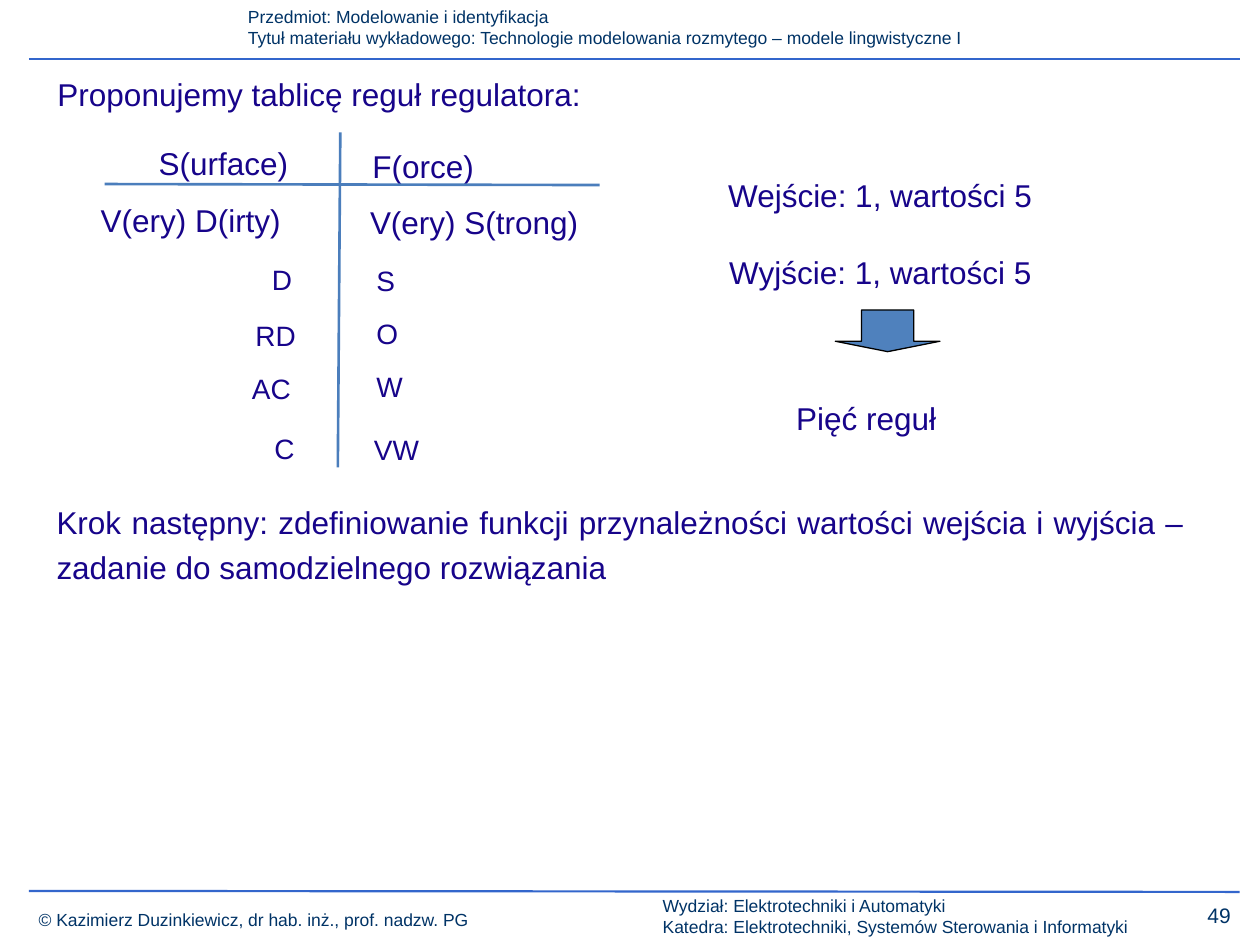
from dataclasses import dataclass

import pptx
import pptx.dml.color
import pptx.enum.shapes
import pptx.enum.text
import pptx.oxml
import pptx.oxml.ns
import pptx.util
from pptx.util import Cm

ALIGN = pptx.enum.text.PP_ALIGN


@dataclass(frozen=True)
class Theme:
    font: str = "Arial"
    ink: str = "17048A"
    frame_ink: str = "003366"
    frame_rule: str = "3366CC"
    table_rule: str = "4B7EBC"
    arrow_fill: str = "4F81BD"
    arrow_line: str = "000000"
    body: float = 18
    entry: float = 16
    number: float = 12
    small: float = 10


@dataclass(frozen=True)
class Label:
    """A piece of text with its place in centimetres."""
    text: str
    left: float
    top: float
    width: float
    height: float = 1.17


@dataclass(frozen=True)
class Rule:
    """A straight line between two points in centimetres."""
    x1: float
    y1: float
    x2: float
    y2: float


THEME = Theme()

# Page frame
FRAME_LABELS = [
    Label("Przedmiot: Modelowanie i identyfikacja\n"
          "Tytuł materiału wykładowego: Technologie modelowania rozmytego – modele lingwistyczne I",
          4.75, 0, 20.65, 1.12),
    Label("© Kazimierz Duzinkiewicz, dr hab. inż., prof. nadzw. PG", 0.53, 18.19, 10.21, 0.69),
    Label("Wydział: Elektrotechniki i Automatyki\n"
          "Katedra: Elektrotechniki, Systemów Sterowania i Informatyki",
          13.11, 17.91, 11.3, 1.12),
]
PAGE_NUMBER = Label("49", 23.75, 18.06, 1.65, 0.76)
FRAME_RULES = [Rule(0.58, 1.19, 24.99, 1.19), Rule(0.58, 17.96, 24.99, 17.98)]

# Statements, table headings and the first rule
BODY_LABELS = [
    Label("Proponujemy tablicę reguł regulatora:", 0.91, 1.24, 23.22),
    Label("S(urface)", 2.95, 2.62, 3.48),
    Label("F(orce)", 7.26, 2.69, 3.48),
    Label("V(ery) D(irty)", 1.78, 3.78, 5.11),
    Label("V(ery) S(trong)", 7.21, 3.81, 5.11),
    Label("Wejście: 1, wartości 5", 14.43, 3.28, 10.36),
    Label("Wyjście: 1, wartości 5", 14.45, 4.83, 10.36),
    Label("Pięć reguł", 15.8, 7.77, 4.29),
    Label("Krok następny: zdefiniowanie funkcji przynależności wartości wejścia i wyjścia – "
          "zadanie do samodzielnego rozwiązania", 0.89, 9.86, 23.22, 2.11),
]

# Remaining rules: input value, output value
ENTRY_LABELS = [
    Label("D", 5.23, 5.03, 1.12, 1.07), Label("S", 7.34, 5.05, 1.12, 1.07),
    Label("RD", 4.9, 6.17, 1.42, 1.07), Label("O", 7.34, 6.12, 1.12, 1.07),
    Label("AC", 4.83, 7.24, 1.55, 1.07), Label("W", 7.34, 7.19, 1.12, 1.07),
    Label("C", 5.28, 8.43, 1.12, 1.07), Label("VW", 7.29, 8.46, 1.73, 1.07),
]
TABLE_RULES = [Rule(2.11, 3.71, 12.09, 3.73), Rule(6.86, 2.67, 6.81, 9.42)]


def rgb(value: str) -> pptx.dml.color.RGBColor:
    return pptx.dml.color.RGBColor.from_string(value)


def add_label(page, label: Label, *, size: float, color: str = THEME.ink,
              align=ALIGN.JUSTIFY, spacing: float = 1.2) -> None:
    box = page.shapes.add_textbox(Cm(label.left), Cm(label.top),
                                  Cm(label.width), Cm(label.height))
    frame = box.text_frame
    frame.word_wrap = True
    frame.text = label.text
    for para in frame.paragraphs:
        para.alignment = align
        para.line_spacing = spacing
        for span in para.runs:
            span.font.name = THEME.font
            span.font.size = pptx.util.Pt(size)
            span.font.color.rgb = rgb(color)


def add_rule(page, rule: Rule, *, color: str, width: float) -> None:
    line = page.shapes.add_connector(pptx.enum.shapes.MSO_CONNECTOR.STRAIGHT,
                                     Cm(rule.x1), Cm(rule.y1), Cm(rule.x2), Cm(rule.y2))
    line.line.color.rgb = rgb(color)
    line.line.width = pptx.util.Pt(width)
    properties = line._element.spPr
    properties.append(pptx.oxml.parse_xml(
        f"<a:effectLst {pptx.oxml.ns.nsdecls('a')}/>"))


def add_down_arrow(page, left: float, top: float, width: float, height: float) -> None:
    arrow = page.shapes.add_shape(pptx.enum.shapes.MSO_SHAPE.DOWN_ARROW,
                                  Cm(left), Cm(top), Cm(width), Cm(height))
    arrow.adjustments[0] = 0.5
    arrow.adjustments[1] = 0.25
    arrow.shadow.inherit = False
    arrow.fill.solid()
    arrow.fill.fore_color.rgb = rgb(THEME.arrow_fill)
    arrow.line.color.rgb = rgb(THEME.arrow_line)
    arrow.line.width = pptx.util.Pt(0.75)


def main() -> None:
    deck = pptx.Presentation()
    deck.slide_width, deck.slide_height = Cm(25.4), Cm(19.05)
    page = deck.slides.add_slide(deck.slide_layouts[6])

    # Header and footer
    for label in FRAME_LABELS:
        add_label(page, label, size=THEME.small, color=THEME.frame_ink,
                  align=ALIGN.LEFT, spacing=1.0)
    add_label(page, PAGE_NUMBER, size=THEME.number, color=THEME.frame_ink,
              align=ALIGN.CENTER, spacing=1.0)
    for rule in FRAME_RULES:
        add_rule(page, rule, color=THEME.frame_rule, width=1.25)

    # Rule table and statements
    for label in BODY_LABELS:
        add_label(page, label, size=THEME.body)
    for label in ENTRY_LABELS:
        add_label(page, label, size=THEME.entry)
    for rule in TABLE_RULES:
        add_rule(page, rule, color=THEME.table_rule, width=1.5)

    # Conclusion arrow
    add_down_arrow(page, 16.84, 6.25, 2.11, 0.84)

    deck.save("out.pptx")


if __name__ == "__main__":
    main()
